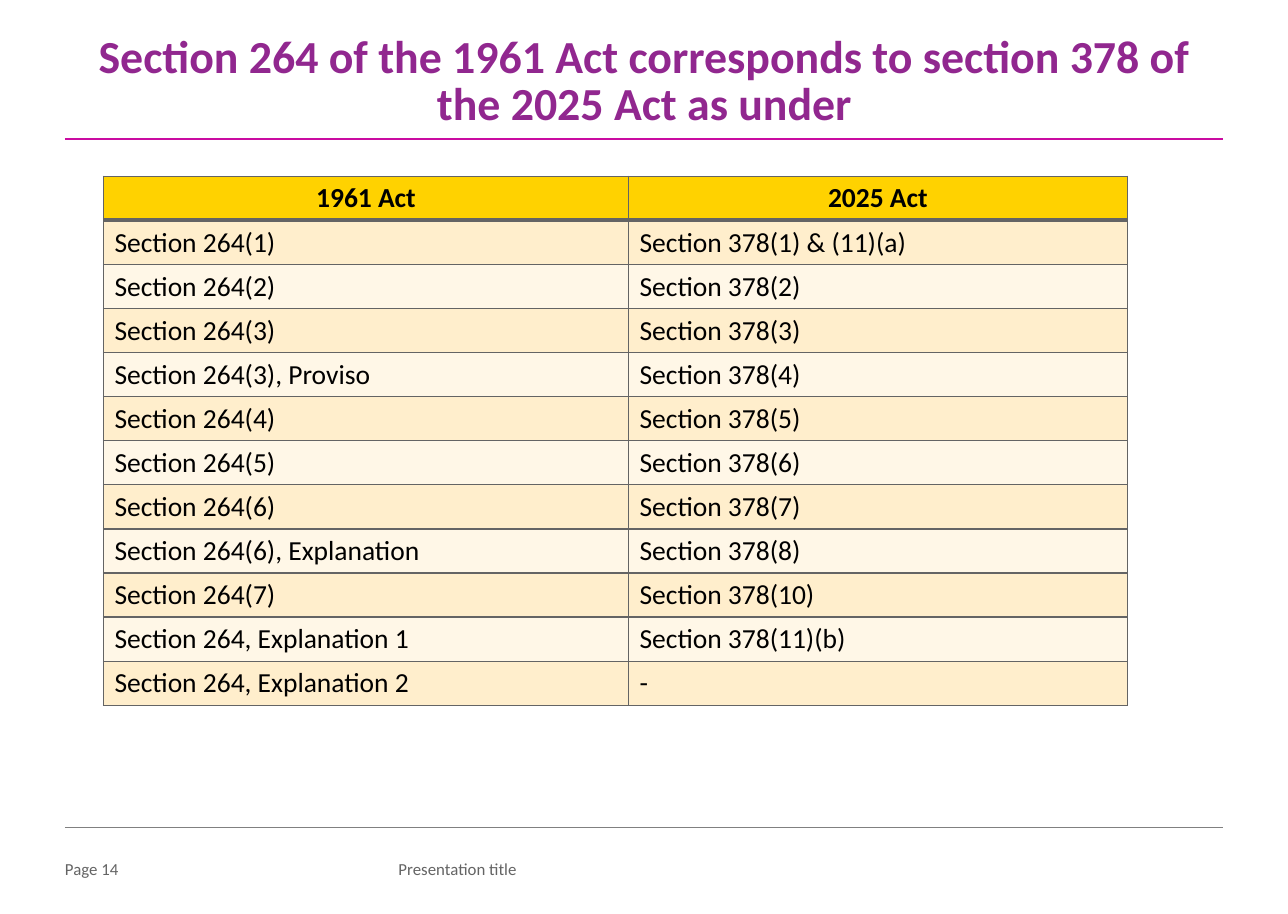
from lxml.etree import SubElement
from pptx import Presentation
from pptx.dml.color import RGBColor
from pptx.enum.shapes import MSO_CONNECTOR
from pptx.enum.text import MSO_ANCHOR, PP_ALIGN
from pptx.oxml.ns import qn
from pptx.util import Inches, Pt

TITLE = "Section 264 of the 1961 Act corresponds to section 378 of\vthe 2025 Act as under"
HEADER = ("1961 Act", "2025 Act")
SECTIONS = [
    ("Section 264(1)", "Section 378(1) & (11)(a)"),
    ("Section 264(2)", "Section 378(2)"),
    ("Section 264(3)", "Section 378(3)"),
    ("Section 264(3), Proviso", "Section 378(4)"),
    ("Section 264(4)", "Section 378(5)"),
    ("Section 264(5)", "Section 378(6)"),
    ("Section 264(6)", "Section 378(7)"),
    ("Section 264(6), Explanation", "Section 378(8)"),
    ("Section 264(7)", "Section 378(10)"),
    ("Section 264, Explanation 1", "Section 378(11)(b)"),
    ("Section 264, Explanation 2", "-"),
]
FOOTERS = [("Page 14", 0.59, 0.79), ("Presentation title", 3.62, 3.76)]

FONT = "Calibri"
PURPLE = RGBColor(0x91, 0x27, 0x8F)
MAGENTA = RGBColor(0xCA, 0x0C, 0xA1)
YELLOW = RGBColor(0xFF, 0xD2, 0x00)
CREAM = RGBColor(0xFF, 0xEE, 0xCC)
PALE = RGBColor(0xFF, 0xF7, 0xE7)
BLACK = RGBColor(0, 0, 0)
GREY = RGBColor(0x64, 0x64, 0x64)
RULE_GREY = RGBColor(0x80, 0x80, 0x80)

LEFT, RIGHT = 0.59, 11.11
TABLE_LEFT, TABLE_TOP = 0.94, 1.6
COL_WIDTHS = (4.77, 4.53)
ROW_HEIGHT = 0.4


def write(tf, text, size, color, bold=False, align=PP_ALIGN.LEFT, spacing=None):
    p = tf.paragraphs[0]
    p.text = text
    p.alignment = align
    if spacing:
        p.line_spacing = spacing
    for r in p.runs:
        r.font.name = FONT
        r.font.size = Pt(size)
        r.font.bold = bold
        r.font.color.rgb = color


def add_text(slide, text, x, y, w, h, **fmt):
    tf = slide.shapes.add_textbox(Inches(x), Inches(y), Inches(w), Inches(h)).text_frame
    tf.word_wrap = True
    tf.margin_left = tf.margin_top = tf.margin_right = tf.margin_bottom = 0
    write(tf, text, **fmt)


def add_rule(slide, y, color, width):
    line = slide.shapes.add_connector(
        MSO_CONNECTOR.STRAIGHT, Inches(LEFT), Inches(y), Inches(RIGHT), Inches(y))
    line.line.color.rgb = color
    line.line.width = Pt(width)
    SubElement(line._element.spPr, qn("a:effectLst"))


def set_borders(cell, **widths):
    """Draw the cell's edges; the fill must be set afterwards."""
    tcPr = cell._tc.get_or_add_tcPr()
    for side in "LRTB":
        ln = SubElement(tcPr, qn(f"a:ln{side}"), w=str(Pt(widths.get(side, 1))))
        fill = SubElement(ln, qn("a:solidFill"))
        SubElement(fill, qn("a:srgbClr"), val=str(GREY))


def add_section_table(slide):
    rows = [HEADER] + SECTIONS
    table = slide.shapes.add_table(
        len(rows), len(HEADER), Inches(TABLE_LEFT), Inches(TABLE_TOP),
        Inches(sum(COL_WIDTHS)), Inches(ROW_HEIGHT * len(rows))).table
    for column, width in zip(table.columns, COL_WIDTHS):
        column.width = Inches(width)
    for i, texts in enumerate(rows):
        table.rows[i].height = Inches(ROW_HEIGHT)
        is_header = i == 0
        fill = YELLOW if is_header else CREAM if i % 2 else PALE
        for j, text in enumerate(texts):
            cell = table.cell(i, j)
            set_borders(cell, B=3 if is_header else 1, T=3 if i == 1 else 1)
            cell.fill.solid()
            cell.fill.fore_color.rgb = fill
            cell.vertical_anchor = MSO_ANCHOR.MIDDLE if (i, j) == (2, 0) else MSO_ANCHOR.TOP
            write(cell.text_frame, text, size=18, color=BLACK, bold=is_header,
                  align=PP_ALIGN.CENTER if is_header else PP_ALIGN.LEFT)


def main():
    prs = Presentation()
    prs.slide_width, prs.slide_height = Inches(11.7), Inches(8.3)
    slide = prs.slides.add_slide(prs.slide_layouts[6])
    add_rule(slide, 7.51, RULE_GREY, 0.25)
    add_rule(slide, 1.26, MAGENTA, 1.5)
    add_text(slide, TITLE, LEFT, 0.33, 10.53, 0.84, size=30, color=PURPLE,
             bold=True, align=PP_ALIGN.CENTER, spacing=0.85)
    add_section_table(slide)
    for text, x, width in FOOTERS:
        add_text(slide, text, x, 7.8, width, 0.22, size=11, color=GREY)
    prs.save("out.pptx")


if __name__ == "__main__":
    main()
